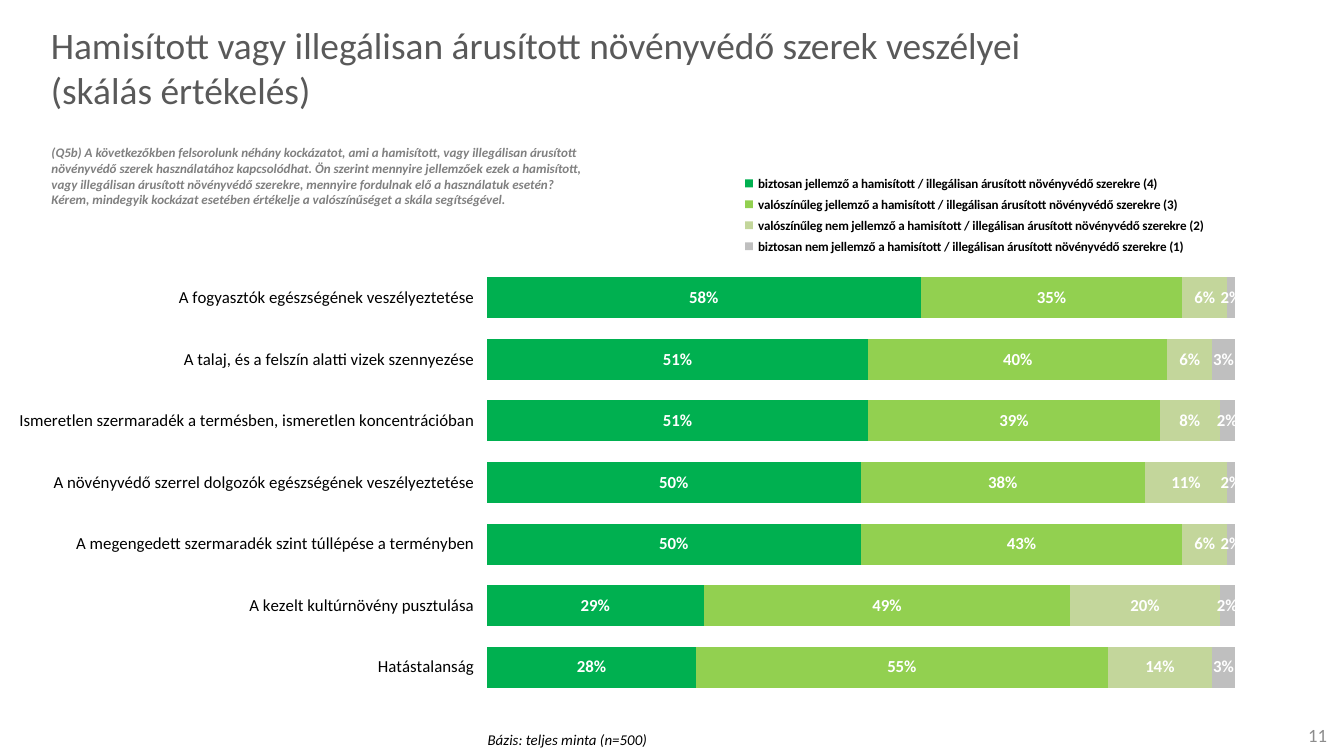
from lxml import etree
from pptx import Presentation
from pptx.chart.data import CategoryChartData
from pptx.dml.color import RGBColor
from pptx.enum.chart import XL_CHART_TYPE as ChartType, XL_LABEL_POSITION as LabelPos
from pptx.enum.chart import XL_LEGEND_POSITION as LegendPos, XL_TICK_LABEL_POSITION as TickLabel
from pptx.enum.chart import XL_TICK_MARK as TickMark
from pptx.enum.text import MSO_ANCHOR as Anchor, MSO_AUTO_SIZE as AutoSize, PP_ALIGN as Align
from pptx.oxml.ns import qn
from pptx.util import Pt

FONT = "Calibri"
COLORS = {
    "title": "595959", "question": "808080", "number": "8C8C8C",
    "text": "000000", "label": "FFFFFF",
    "surely": "00B050", "probably": "92D050",
    "probably_not": "C3D69B", "surely_not": "BFBFBF",
}
RISKS = [
    "A fogyasztók egészségének veszélyeztetése",
    "A talaj, és a felszín alatti vizek szennyezése",
    "Ismeretlen szermaradék a termésben, ismeretlen koncentrációban",
    "A növényvédő szerrel dolgozók egészségének veszélyeztetése",
    "A megengedett szermaradék szint túllépése a terményben",
    "A kezelt kultúrnövény pusztulása",
    "Hatástalanság",
]
SCALE = "{} a hamisított / illegálisan árusított növényvédő szerekre ({})"
ANSWERS = [
    ("biztosan jellemző", 4, "surely", [58, 51, 51, 50, 50, 29, 28]),
    ("valószínűleg jellemző", 3, "probably", [35, 40, 39, 38, 43, 49, 55]),
    ("valószínűleg nem jellemző", 2, "probably_not", [6, 6, 8, 11, 6, 20, 14]),
    ("biztosan nem jellemző", 1, "surely_not", [2, 3, 2, 2, 2, 2, 3]),
]
QUESTION = (
    "(Q5b) A következőkben felsorolunk néhány kockázatot, ami a hamisított, vagy "
    "illegálisan árusított növényvédő szerek használatához kapcsolódhat. Ön szerint "
    "mennyire jellemzőek ezek a hamisított, vagy illegálisan árusított növényvédő "
    "szerekre, mennyire fordulnak elő a használatuk esetén? Kérem, mindegyik kockázat "
    "esetében értékelje a valószínűséget a skála segítségével."
)


def style_font(font, size, color, bold=False, italic=False):
    """Set face, size, colour and weight of a font."""
    font.name, font.size = FONT, Pt(size)
    font.bold, font.italic = bold, italic
    font.color.rgb = RGBColor.from_string(COLORS[color])


def fill_text(sp, text, size, color, align=Align.LEFT, anchor=Anchor.TOP, **weight):
    """Write text into a shape and format its runs."""
    tf = sp.text_frame
    tf.text = text
    tf.word_wrap = True
    tf.auto_size = AutoSize.NONE
    tf.vertical_anchor = anchor
    for p in tf.paragraphs:
        p.alignment = align
        for r in p.runs:
            style_font(r.font, size, color, **weight)


def add_title(slide, box, text):
    """Place the title placeholder in the box."""
    sp = slide.shapes.title
    sp.left, sp.top, sp.width, sp.height = map(Pt, box)
    fill_text(sp, text, 20, "title", anchor=Anchor.MIDDLE)


def add_text(slide, box, text, size, color, **style):
    """Place a text box in the box."""
    fill_text(slide.shapes.add_textbox(*map(Pt, box)), text, size, color, **style)


def make_layout(x, y, w, h, inner=False):
    """Return a chart layout element given in fractions of the chart."""
    layout = etree.Element(qn("c:layout"))
    manual = etree.SubElement(layout, qn("c:manualLayout"))
    parts = [("layoutTarget", "inner")] if inner else []
    parts += [("xMode", "edge"), ("yMode", "edge"), ("x", x), ("y", y), ("w", w), ("h", h)]
    for tag, value in parts:
        etree.SubElement(manual, qn(f"c:{tag}")).set("val", str(value))
    return layout


def place_parts(chart):
    """Fix the positions of plot area and legend inside the chart."""
    plot_area = chart.element.xpath(".//c:plotArea")[0]
    for old in plot_area.findall(qn("c:layout")):
        plot_area.remove(old)
    plot_area.insert(0, make_layout(0.463, 0.223, 0.517, 0.724, inner=True))
    legend = chart.element.xpath(".//c:legend")[0]
    for old in legend.findall(qn("c:layout")):
        legend.remove(old)
    legend.find(qn("c:legendPos")).addnext(make_layout(0.63, 0.06, 0.34, 0.15))


def format_axes(chart):
    """Show the risks from top to bottom and hide the percent scale."""
    cat = chart.category_axis
    cat.reverse_order = True
    cat.has_major_gridlines = False
    cat.major_tick_mark = TickMark.OUTSIDE
    cat.tick_label_position = TickLabel.LOW
    cat.format.line.fill.background()
    style_font(cat.tick_labels.font, 9, "text")
    val = chart.value_axis
    val.minimum_scale, val.maximum_scale = 0, 100
    val.has_major_gridlines = False
    val.visible = False


def add_risk_chart(slide, box):
    """Place the stacked bar chart of the answers in the box."""
    data = CategoryChartData()
    data.categories = RISKS
    for answer, score, _, values in ANSWERS:
        data.add_series(SCALE.format(answer, score), values)
    chart = slide.shapes.add_chart(ChartType.BAR_STACKED, *map(Pt, box), data).chart
    style_font(chart.font, 9, "text", bold=True)
    chart.has_title = False
    chart.has_legend = True
    chart.legend.position = LegendPos.TOP
    chart.legend.include_in_layout = False
    style_font(chart.legend.font, 7, "text", bold=True)
    format_axes(chart)
    plot = chart.plots[0]
    plot.gap_width, plot.overlap = 50, 100
    plot.vary_by_categories = False
    for series, (_, _, color, _) in zip(plot.series, ANSWERS):
        series.format.fill.solid()
        series.format.fill.fore_color.rgb = RGBColor.from_string(COLORS[color])
        labels = series.data_labels
        labels.show_value = True
        labels.number_format = '0"%"'
        labels.number_format_is_linked = False
        labels.position = LabelPos.CENTER
        style_font(labels.font, 9, "label", bold=True)
    place_parts(chart)


def main():
    """Build the slide and save it."""
    prs = Presentation()
    prs.slide_width, prs.slide_height = Pt(720), Pt(405)
    slide = prs.slides.add_slide(prs.slide_layouts[5])
    add_title(slide, (20, 12, 638, 48),
              "Hamisított vagy illegálisan árusított növényvédő szerek veszélyei\n"
              "(skálás értékelés)")
    add_text(slide, (20.5, 74, 300, 41), QUESTION, 7, "question", bold=True, italic=True)
    add_risk_chart(slide, (-98, 72, 775, 319))
    add_text(slide, (231, 388, 146, 17), "Bázis: teljes minta (n=500)", 8, "text",
             align=Align.CENTER, italic=True)
    add_text(slide, (680.5, 383, 37.5, 21.5), "11", 10, "number",
             align=Align.RIGHT, anchor=Anchor.MIDDLE)
    prs.save("out.pptx")


if __name__ == "__main__":
    main()
